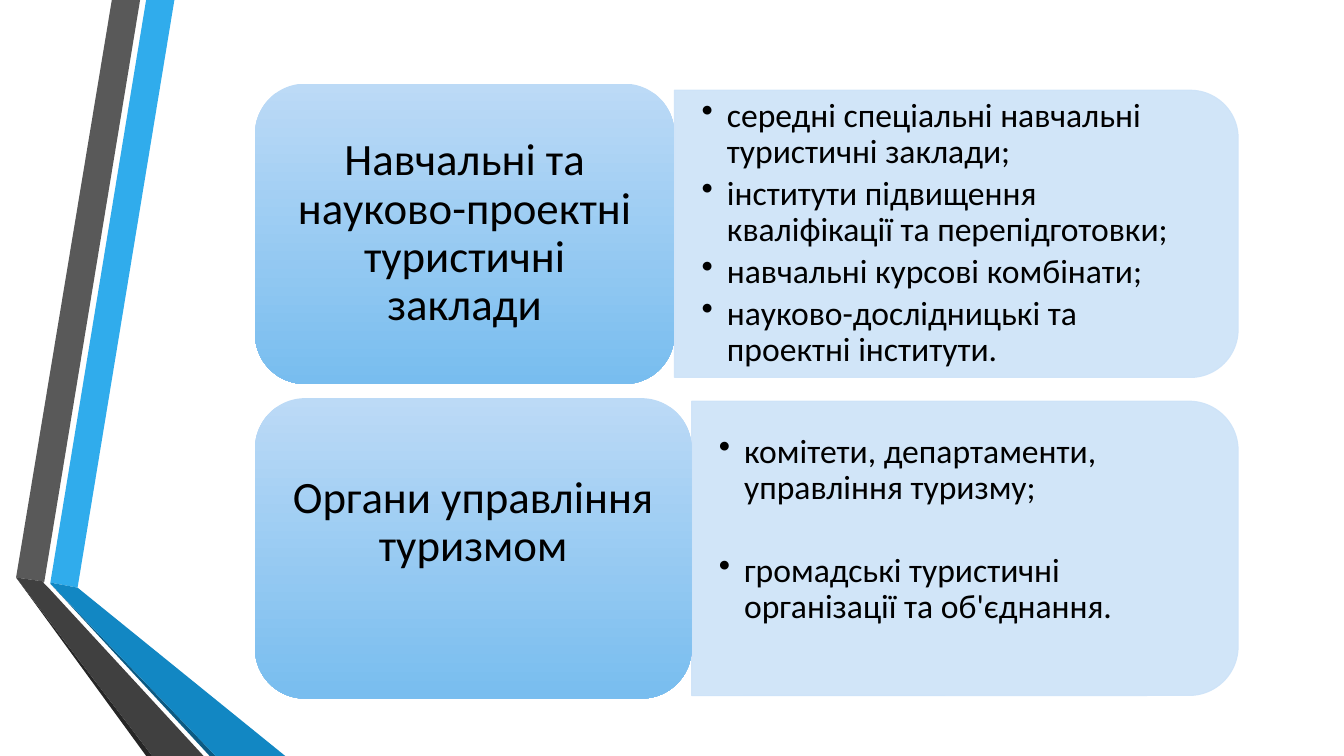
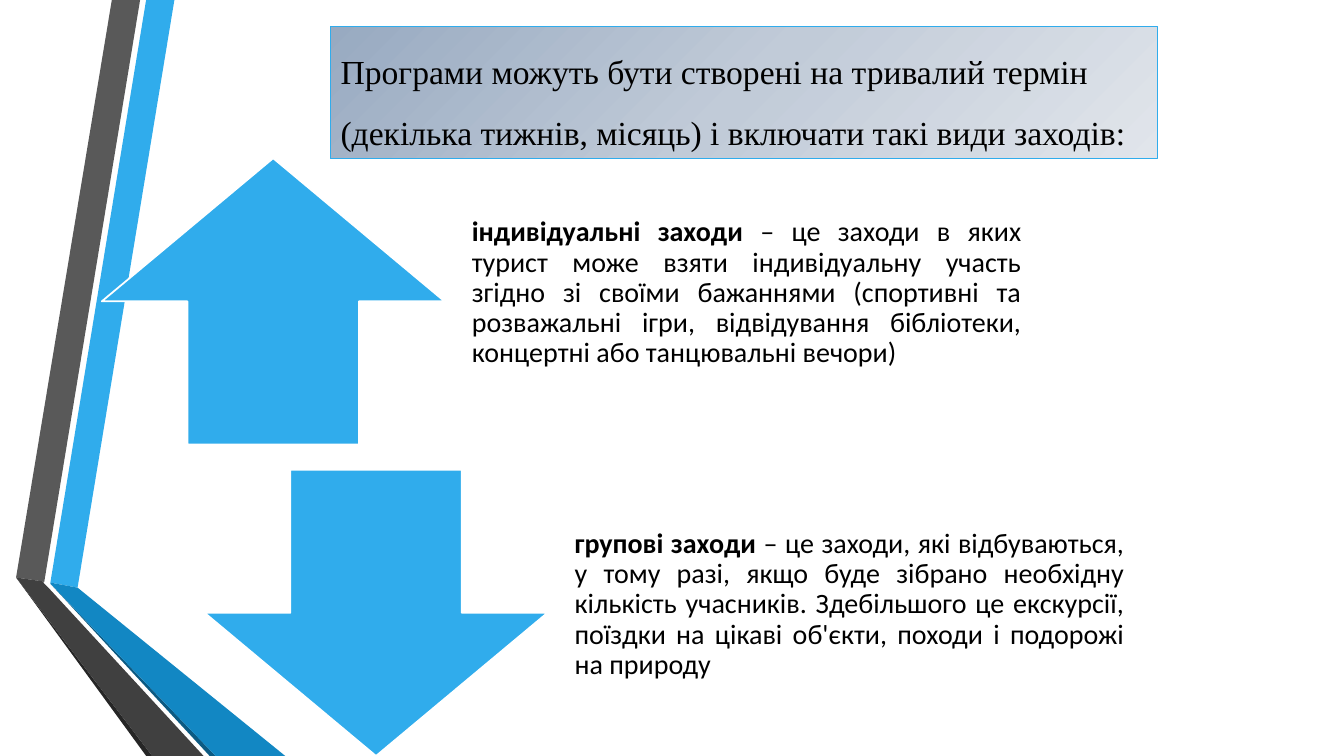
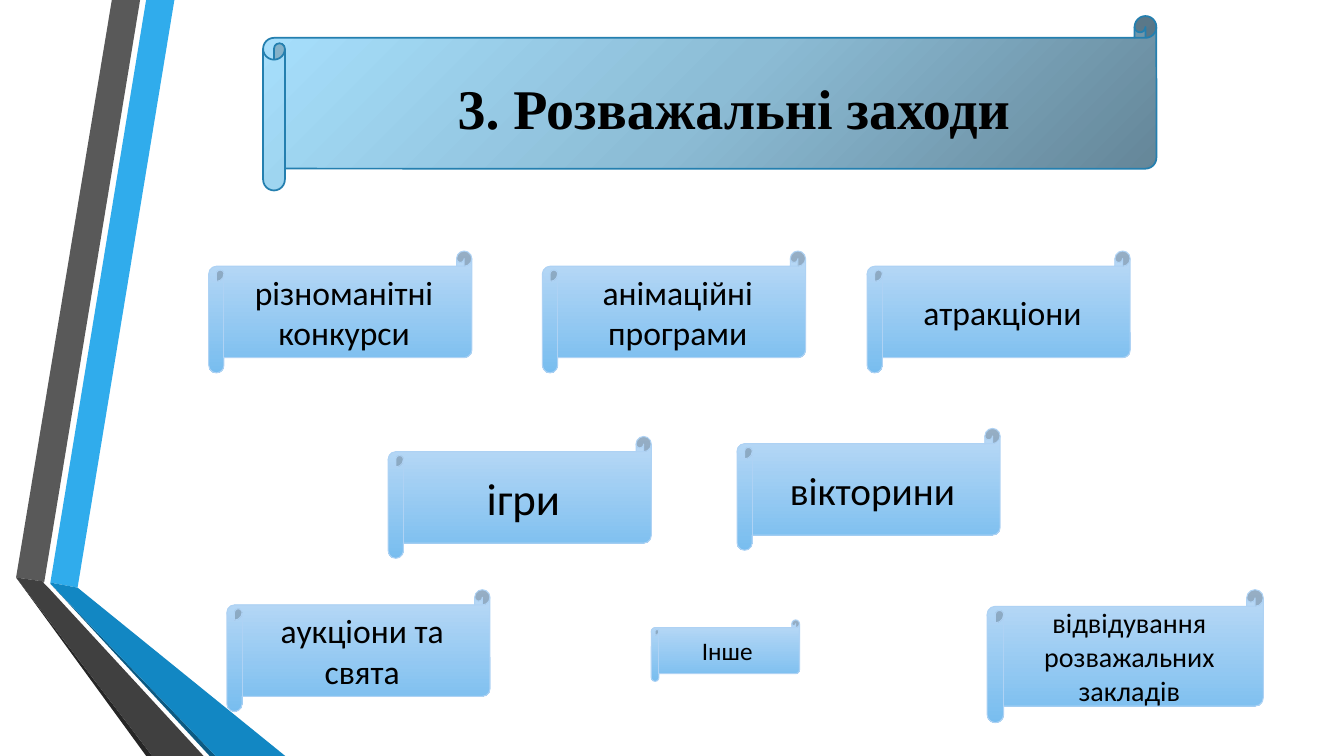
import lxml.etree
import pptx
import pptx.dml.color
import pptx.enum.shapes
import pptx.enum.text
import pptx.oxml.ns
import pptx.util

PX = 9144
WIDTH, HEIGHT = 1333, 750
RGB = pptx.dml.color.RGBColor
SHAPE = pptx.enum.shapes.MSO_SHAPE
ALIGN = pptx.enum.text.PP_ALIGN
ANCHOR = pptx.enum.text.MSO_ANCHOR

BLACK = RGB(0x00, 0x00, 0x00)
WHITE = RGB(0xFF, 0xFF, 0xFF)
SKY = RGB(0x30, 0xAC, 0xEC)
OCEAN = RGB(0x12, 0x87, 0xC3)
NAVY = RGB(0x0C, 0x5A, 0x82)
GRAY = RGB(0x59, 0x59, 0x59)
DARK_GRAY = RGB(0x40, 0x40, 0x40)
SHADE = RGB(0x26, 0x26, 0x26)
PALE = RGB(0xCD, 0xE3, 0xF8)
SCROLL_LINE = RGB(0xAE, 0xD2, 0xF4)
BANNER_LINE = RGB(0x24, 0x7F, 0xAF)
SOFT_BLUE = [(0, RGB(0xBC, 0xDA, 0xF6)), (100, RGB(0x78, 0xBD, 0xEF))]
STEEL = [(0, RGB(0x98, 0xAA, 0xC1)), (50, RGB(0xC1, 0xCB, 0xD8)),
         (100, RGB(0xE1, 0xE5, 0xEB))]
BANNER = [(0, RGB(0x63, 0x84, 0x96)), (50, RGB(0x8C, 0xBC, 0xD5)),
          (100, RGB(0xA7, 0xE0, 0xFD))]

BODY_FONT = "Calibri"
TITLE_FONT = "Times New Roman"

RIBBONS = [
    (SKY, [(50, 578), (77, 583), (173, 0), (145, 0)]),
    (GRAY, [(139, 0), (111, 0), (16, 573), (44, 577)]),
    (SHADE, [(16, 573), (145, 750), (151, 750)]),
    (NAVY, [(50, 579), (208, 750), (214, 750)]),
    (OCEAN, [(50, 579), (214, 750), (283, 750), (77, 583), (50, 578)]),
    (DARK_GRAY, [(202, 750), (48, 583), (43, 578), (44, 577), (16, 573), (151, 750)]),
]


def px(value):
    return pptx.util.Emu(round(value * PX))


def apply(target, values):
    for name, value in values.items():
        setattr(target, name, value)


def add_element(parent, tag, **attributes):
    return lxml.etree.SubElement(parent, pptx.oxml.ns.qn(tag), attributes)


class Deck:
    def __init__(self):
        self.presentation = pptx.Presentation()
        apply(self.presentation, {"slide_width": px(WIDTH), "slide_height": px(HEIGHT)})
        self.slide = None

    def new_slide(self):
        self.slide = self.presentation.slides.add_slide(self.presentation.slide_layouts[6])
        for color, points in RIBBONS:
            builder = self.slide.shapes.build_freeform(*points[0], scale=PX)
            builder.add_line_segments(points[1:], close=True)
            self.paint(builder.convert_to_shape(), color)

    def paint(self, shape, fill, line=None, line_width=0.75, angle=None):
        shape.shadow.inherit = False
        if isinstance(fill, list):
            self.paint_gradient(shape, fill, angle)
        else:
            shape.fill.solid()
            shape.fill.fore_color.rgb = fill
        if line is None:
            shape.line.fill.background()
        else:
            shape.line.color.rgb = line
            shape.line.width = pptx.util.Pt(line_width)

    def paint_gradient(self, shape, stops, angle):
        shape.fill.gradient()
        gradient = shape._element.spPr.find(pptx.oxml.ns.qn("a:gradFill"))
        for child in list(gradient):
            gradient.remove(child)
        stop_list = add_element(gradient, "a:gsLst")
        for position, color in stops:
            stop = add_element(stop_list, "a:gs", pos=str(position * 1000))
            add_element(stop, "a:srgbClr", val=str(color))
        if angle is None:
            focus = add_element(gradient, "a:path", path="circle")
            add_element(focus, "a:fillToRect", r="100000", b="100000")
        else:
            add_element(gradient, "a:lin", ang=str(angle * 60000), scaled="0")

    def shape(self, kind, left, top, width, height, fill, **style):
        shape = self.slide.shapes.add_shape(kind, *map(px, (left, top, width, height)))
        self.paint(shape, fill, **style)
        return shape

    def text_box(self, left, top, width, height):
        return self.slide.shapes.add_textbox(*map(px, (left, top, width, height)))

    def set_text(self, shape, paragraphs, size, font=BODY_FONT, align=ALIGN.LEFT,
                 anchor=ANCHOR.MIDDLE, insets=(10, 5, 10, 5), spacing=1.0,
                 after=0, bullets=False, bold=False, wrap=True):
        frame = shape.text_frame
        sides = ("margin_left", "margin_top", "margin_right", "margin_bottom")
        apply(frame, dict(zip(sides, map(px, insets))))
        apply(frame, {"word_wrap": wrap, "vertical_anchor": anchor})
        for index, runs in enumerate(paragraphs):
            paragraph = frame.add_paragraph() if index else frame.paragraphs[0]
            apply(paragraph, {"alignment": align, "line_spacing": spacing})
            if index < len(paragraphs) - 1:
                paragraph.space_after = pptx.util.Pt(after)
            if bullets:
                properties = paragraph._p.get_or_add_pPr()
                properties.set("marL", str(px(25)))
                properties.set("indent", str(px(-25)))
                add_element(properties, "a:buChar", char="•")
            if isinstance(runs, str):
                runs = [(runs, bold)]
            for text, is_bold in runs:
                run = paragraph.add_run()
                run.text = text
                apply(run.font, {"name": font, "size": pptx.util.Pt(size), "bold": is_bold})
                run.font.color.rgb = BLACK

    def category(self, middle, title_width, panel_height, title, items,
                 after, title_lift=0, list_lift=0):
        left, right = 253, 1228
        panel_left = left + title_width
        length = right - panel_left
        panel = self.shape(SHAPE.ROUND_2_SAME_RECTANGLE,
                           panel_left + (length - panel_height) / 2,
                           middle - length / 2, panel_height, length, PALE, line=PALE)
        panel.rotation = 90
        for color in panel._element.spPr.iter(pptx.oxml.ns.qn("a:srgbClr")):
            add_element(color, "a:alpha", val="90000")
        text_height = panel_height - 28
        box = self.text_box(panel_left, middle - text_height / 2,
                            1215 - panel_left, text_height)
        self.set_text(box, items, 24, insets=(27, 14, 27, 14 + list_lift),
                      spacing=0.9, after=after, bullets=True)
        card = self.shape(SHAPE.ROUNDED_RECTANGLE, left, middle - 149, title_width, 298,
                          SOFT_BLUE, angle=90)
        self.set_text(card, [title], 32, align=ALIGN.CENTER,
                      insets=(13, 7, 13, 7 + title_lift), spacing=0.9)

    def arrow(self, kind, left, top, term, definition):
        self.shape(kind, left, top, 340, 284, SKY, line=WHITE, line_width=1.25)
        box = self.text_box(left + 351, top, 577, 284)
        self.set_text(box, [[(term, True), (definition, False)]], 20, align=ALIGN.JUSTIFY,
                      insets=(16, 0, 16, 16), spacing=0.9)

    def scroll(self, text, left, top, size=24, width=261, height=121):
        shape = self.shape(SHAPE.HORIZONTAL_SCROLL, left, top, width, height, SOFT_BLUE,
                           line=SCROLL_LINE, angle=90)
        self.set_text(shape, [text], size, align=ALIGN.CENTER)


def institutions(deck):
    deck.new_slide()
    deck.category(232, 416, 285, "Навчальні та науково-проектні туристичні заклади", [
        "середні спеціальні навчальні туристичні заклади;",
        "інститути підвищення кваліфікації та перепідготовки;",
        "навчальні курсові комбінати;",
        "науково-дослідницькі та проектні інститути.",
    ], after=4)
    deck.category(544, 433, 292, "Органи управління туризмом", [
        "комітети, департаменти, управління туризму;",
        "громадські туристичні організації та об'єднання.",
    ], after=33, title_lift=50, list_lift=36)


def programmes(deck):
    deck.new_slide()
    heading = deck.shape(SHAPE.RECTANGLE, 328, 26, 820, 131, STEEL, line=SKY)
    deck.set_text(heading, ["Програми можуть бути створені на тривалий термін "
                            "(декілька тижнів, місяць) і включати такі види заходів:"],
                  24, font=TITLE_FONT, anchor=ANCHOR.TOP, spacing=1.5)
    deck.arrow(SHAPE.UP_ARROW, 101, 157, "індивідуальні заходи",
               " – це заходи в яких турист може взяти індивідуальну участь згідно зі "
               "своїми бажаннями (спортивні та розважальні ігри, відвідування "
               "бібліотеки, концертні або танцювальні вечори)")
    deck.arrow(SHAPE.DOWN_ARROW, 203, 466, "групові заходи",
               " – це заходи, які відбуваються, у тому разі, якщо буде зібрано необхідну "
               "кількість учасників. Здебільшого це екскурсії, поїздки на цікаві "
               "об'єкти, походи і подорожі на природу")


def entertainment(deck):
    deck.new_slide()
    deck.shape(SHAPE.HORIZONTAL_SCROLL, 261, 16, 886, 173, BANNER,
               line=BANNER_LINE, line_width=1.25, angle=225)
    deck.set_text(deck.text_box(444, 68, 574, 77), ["3. Розважальні заходи"], 40,
                  font=TITLE_FONT, anchor=ANCHOR.TOP, bold=True, wrap=False)
    deck.scroll("різноманітні конкурси", 207, 249)
    deck.scroll("анімаційні програми", 538, 249)
    deck.scroll("атракціони", 860, 249)
    deck.scroll("ігри", 385, 433, size=32)
    deck.scroll("вікторини", 731, 425, size=28)
    deck.scroll("аукціони та свята", 225, 585)
    deck.scroll("Інше", 646, 615, size=18, width=147, height=61)
    deck.scroll("відвідування розважальних закладів", 979, 585, size=20, width=274, height=132)


def main():
    deck = Deck()
    institutions(deck)
    programmes(deck)
    entertainment(deck)
    deck.presentation.save("out.pptx")


if __name__ == "__main__":
    main()
